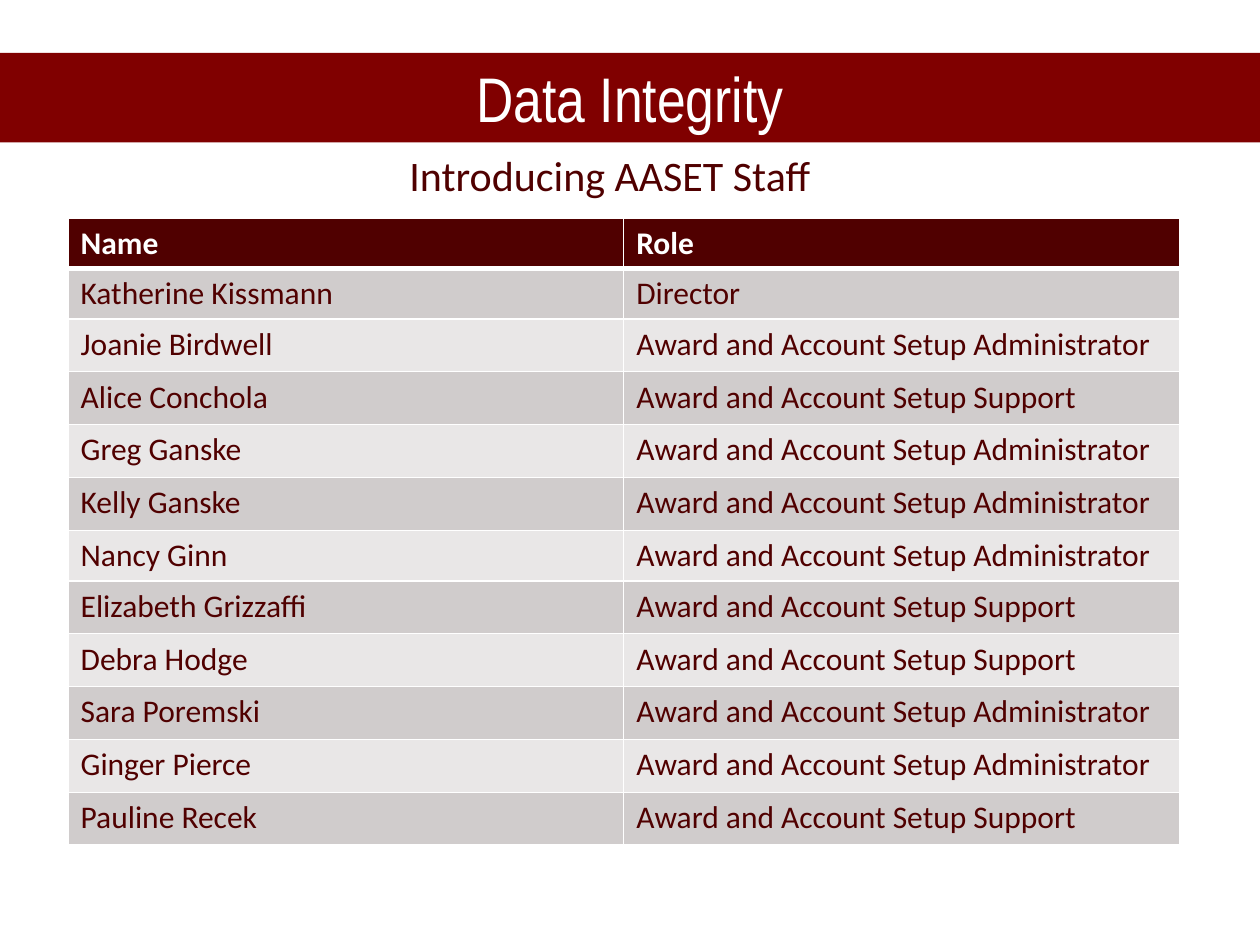
from pptx import Presentation
from pptx.dml.color import RGBColor
from pptx.enum.text import MSO_ANCHOR, MSO_AUTO_SIZE, PP_ALIGN
from pptx.oxml.ns import qn
from pptx.util import Inches, Pt
from lxml.etree import SubElement

# Content
TITLE = "Data Integrity"
SUBTITLE = "Introducing AASET Staff"
HEADER = ("Name", "Role")
ADMINISTRATOR = "Award and Account Setup Administrator"
SUPPORT = "Award and Account Setup Support"
STAFF = [
    ("Katherine Kissmann", "Director"),
    ("Joanie Birdwell", ADMINISTRATOR),
    ("Alice Conchola", SUPPORT),
    ("Greg Ganske", ADMINISTRATOR),
    ("Kelly Ganske", ADMINISTRATOR),
    ("Nancy Ginn", ADMINISTRATOR),
    ("Elizabeth Grizzaffi", SUPPORT),
    ("Debra Hodge", SUPPORT),
    ("Sara Poremski", ADMINISTRATOR),
    ("Ginger Pierce", ADMINISTRATOR),
    ("Pauline Recek", SUPPORT),
]

# Style
WHITE, RED, MAROON = "FFFFFF", "800000", "500000"
BANDS = ("D0CCCC", "E9E7E7")
ROW_HEIGHT, LOW_ROW_HEIGHT = 0.42, 0.4
LOW_ROWS = (0, 1, 6)
COLUMN_WIDTH = 4.41


def color(hex_text):
    return RGBColor.from_string(hex_text)


def set_fill(part, hex_text):
    part.fill.solid()
    part.fill.fore_color.rgb = color(hex_text)


def write(frame, text, size, font_name, hex_text, bold=False, align=PP_ALIGN.LEFT):
    frame.text = text
    frame.word_wrap = True
    paragraph = frame.paragraphs[0]
    paragraph.alignment = align
    font = paragraph.font
    font.size, font.name, font.bold = Pt(size), font_name, bold
    font.color.rgb = color(hex_text)


def add_borders(cell, widths):
    properties = cell._tc.get_or_add_tcPr()
    for side, width in widths.items():
        line = SubElement(properties, qn(f"a:ln{side}"), w=str(Pt(width)))
        SubElement(SubElement(line, qn("a:solidFill")), qn("a:srgbClr"), val=WHITE)


prs = Presentation()
prs.slide_width, prs.slide_height = Inches(10), Inches(7.5)
slide = prs.slides.add_slide(prs.slide_layouts[5])

# Title band across the slide
title = slide.shapes.title
title.left, title.top = Inches(0), Inches(0.42)
title.width, title.height = prs.slide_width, Inches(0.71)
set_fill(title, RED)
write(title.text_frame, TITLE, 36, "Arial Narrow", WHITE, align=PP_ALIGN.CENTER)
title.text_frame.vertical_anchor = MSO_ANCHOR.MIDDLE
title.text_frame.auto_size = MSO_AUTO_SIZE.NONE

# Subtitle
subtitle = slide.shapes.add_textbox(Inches(0.93), Inches(1.14), Inches(7.82), Inches(0.5))
write(subtitle.text_frame, SUBTITLE, 24, "Calibri", MAROON, align=PP_ALIGN.CENTER)

# Staff table
rows = [HEADER, *STAFF]
heights = [LOW_ROW_HEIGHT if r in LOW_ROWS else ROW_HEIGHT for r in range(len(rows))]
staff_table = slide.shapes.add_table(
    len(rows), len(HEADER), Inches(0.54), Inches(1.73),
    Inches(COLUMN_WIDTH * len(HEADER)), Inches(sum(heights))).table
for column in staff_table.columns:
    column.width = Inches(COLUMN_WIDTH)
for r, (entries, height) in enumerate(zip(rows, heights)):
    staff_table.rows[r].height = Inches(height)
    is_header = r == 0
    for c, entry in enumerate(entries):
        cell = staff_table.cell(r, c)
        add_borders(cell, {"L": 1, "R": 1, "T": 3 if r == 1 else 1, "B": 3 if is_header else 1})
        set_fill(cell, MAROON if is_header else BANDS[(r - 1) % 2])
        write(cell.text_frame, entry, 18, "Calibri", WHITE if is_header else MAROON, is_header)

prs.save("out.pptx")
